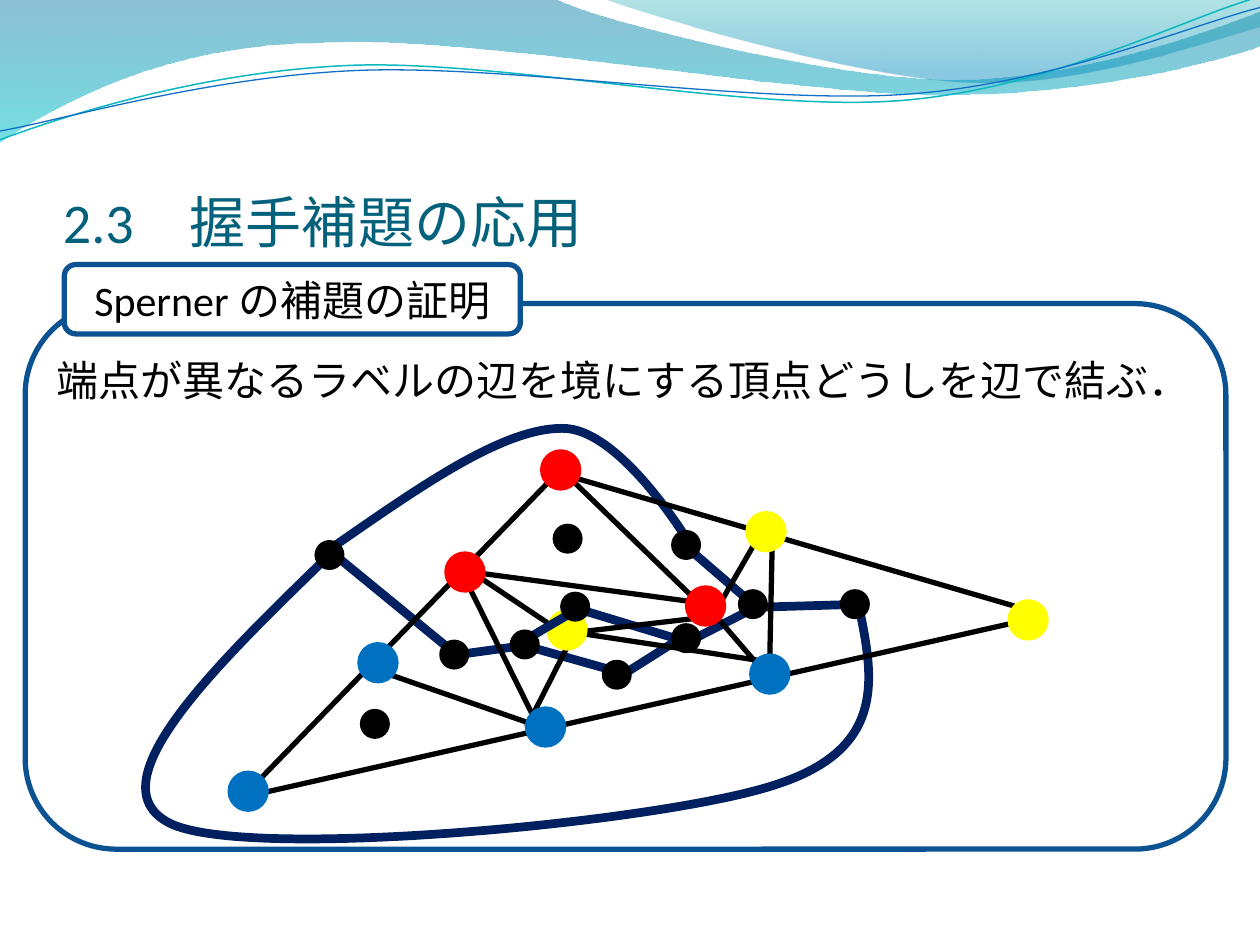
from dataclasses import dataclass

import pptx
import pptx.dml.color
import pptx.enum.shapes
import pptx.enum.text
import pptx.oxml
import pptx.oxml.ns
import pptx.util
from pptx.util import Inches

COLORS = {
    "red": "FF0000", "yellow": "FFFF00", "blue": "0070C0", "black": "000000",
    "white": "FFFFFF", "navy": "002060", "frame": "0B5292", "title": "04617B",
    "wave_teal": "0AB8BF", "wave_blue": "0F6FC6",
    "band_top": "0074A1", "band_bottom": "00C6CF",
    "swoosh_top": "00A1A9", "swoosh_bottom": "008BBF",
}
FONT = "Calibri"
VERTEX_SIZE, FACE_SIZE = 0.3, 0.21
Point = tuple[float, float]


@dataclass
class Stop:
    position: float
    color: str
    alpha: int


@dataclass
class Outline:
    """A start point, then segments of one point (line) or three (cubic curve)."""
    start: Point
    segments: list[tuple[Point, ...]]
    color: str = ""
    width: float = 0
    stops: tuple[Stop, ...] = ()


@dataclass
class Dot:
    left: float
    top: float
    color: str = "black"
    size: float = FACE_SIZE


@dataclass
class Edge:
    x1: float
    y1: float
    x2: float
    y2: float


WAVES = [
    Outline((0, -0.01), [((4.4, -0.01),), ((4.76, 0.17), (6.64, 0.63), (7.58, 0.63)),
                         ((8.53, 0.63), (9.58, 0.26), (10, 0.09)), ((10.01, 0.36),),
                         ((9.83, 0.44), (8.7, 0.76), (7.46, 0.75)),
                         ((6.22, 0.75), (3.82, 0.28), (2.57, 0.34)),
                         ((1.29, 0.35), (0.46, 0.83), (-0.01, 1.13))],
            stops=(Stop(0, "band_top", 45), Stop(1, "band_bottom", 55))),
    Outline((4.79, -0.01), [((5.09, 0.11), (6.82, 0.62), (7.69, 0.65)),
                            ((8.56, 0.69), (9.61, 0.32), (10, 0.21)), ((10, 0),)],
            stops=(Stop(0, "swoosh_top", 30), Stop(0.8, "swoosh_bottom", 45))),
    Outline((0, 1.11), [((0.48, 0.93), (1.58, 0.57), (2.77, 0.52)),
                        ((3.95, 0.47), (5.93, 0.89), (7.13, 0.8)),
                        ((8.33, 0.71), (9.38, 0.15), (9.98, -0.02))], "wave_teal", 0.85),
    Outline((0, 1.04), [((0.47, 0.96), (1.64, 0.61), (2.83, 0.56)),
                        ((4.03, 0.51), (5.97, 0.83), (7.17, 0.75)),
                        ((8.36, 0.67), (9.41, 0.21), (10, 0.06))], "wave_blue", 0.75),
]
OUTER_ARCS = [
    Outline((6.81, 4.78), [((6.93, 5.36), (7.06, 5.94), (6.15, 6.23)),
                           ((5.24, 6.53), (1.93, 6.84), (1.34, 6.53)),
                           ((0.75, 6.22), (1.68, 5.31), (2.62, 4.4))], "navy", 5),
    Outline((2.63, 4.35), [((3.31, 3.88), (3.98, 3.4), (4.46, 3.4)),
                           ((4.93, 3.39), (5.49, 4.34), (5.49, 4.34))], "navy", 5),
]
DUAL_EDGES = [
    Edge(6, 4.82, 6.68, 4.8), Edge(5.46, 4.35, 5.9, 4.73),
    Edge(5.47, 5.09, 5.9, 4.87), Edge(4.61, 4.84, 5.34, 5.06),
    Edge(4.92, 5.37, 5.52, 4.99), Edge(4.15, 5.12, 4.97, 5.35),
    Edge(2.64, 4.39, 3.53, 5.12), Edge(3.6, 5.2, 4.26, 5.11),
]
EDGE_OVER_VERTEX = Edge(4.49, 4.89, 4.15, 5.09)
MESH_EDGES = [
    Edge(1.98, 6.27, 4.35, 3.83), Edge(4.45, 3.76, 8.05, 4.81),
    Edge(2.05, 6.3, 8.15, 4.92), Edge(3.11, 5.36, 4.29, 5.77),
    Edge(4.22, 5.66, 3.66, 4.53), Edge(4.56, 3.83, 5.53, 4.77),
    Edge(3.58, 4.43, 4.43, 5), Edge(6.13, 4.26, 6.11, 5.2),
    Edge(3.74, 4.54, 5.75, 4.81), Edge(4.56, 5.02, 4.18, 5.77),
    Edge(4.56, 5.02, 6.01, 5.24), Edge(4.56, 5.02, 5.5, 4.91),
    Edge(6.13, 5.41, 5.7, 4.91), Edge(5.68, 4.85, 5.98, 4.33),
]
VERTICES = [Dot(x, y, color, VERTEX_SIZE) for x, y, color in [
    (4.3, 3.58, "red"), (8.01, 4.77, "yellow"), (1.82, 6.13, "blue"),
    (2.85, 5.11, "blue"), (3.54, 4.39, "red"), (4.18, 5.62, "blue"),
    (5.96, 5.2, "blue"), (5.93, 4.07, "yellow"), (4.35, 4.85, "yellow"),
    (5.45, 4.66, "red"),
]]
FACES = [Dot(x, y) for x, y in [
    (4.4, 4.17), (5.34, 4.22), (5.87, 4.69), (6.68, 4.69), (5.34, 4.96), (4.79, 5.25),
    (3.5, 5.09), (2.87, 5.64), (2.51, 4.3), (4.46, 4.71), (4.06, 5.01),
]]


def rgb(name: str) -> pptx.dml.color.RGBColor:
    return pptx.dml.color.RGBColor.from_string(COLORS[name])


def style(sp, fill: str, line: str, width: float) -> None:
    """Set fill and line; an empty colour name means none."""
    sp.shadow.inherit = False
    for target, color in ((sp.fill, fill), (sp.line.fill, line)):
        if color:
            target.solid()
            target.fore_color.rgb = rgb(color)
        else:
            target.background()
    if line:
        sp.line.width = pptx.util.Pt(width)


def fill_gradient(sp, stops: tuple[Stop, ...]) -> None:
    """Apply a translucent gradient from top to bottom."""
    sp.fill.gradient()
    sp.fill.gradient_angle = 270
    for target, stop in zip(sp.fill.gradient_stops, stops):
        target.position = stop.position
        target.color.rgb = rgb(stop.color)
    colors = list(sp.element.spPr.iter(pptx.oxml.ns.qn("a:srgbClr")))
    for color, stop in zip(colors, stops):
        color.append(pptx.oxml.parse_xml(
            f'<a:alpha {pptx.oxml.ns.nsdecls("a")} val="{stop.alpha * 1000}"/>'))


def bend_segments(sp, segments: list[tuple[Point, ...]]) -> None:
    """Turn each run of three straight steps that stands for a curve into a Bezier."""
    steps = iter(list(sp.element.spPr.iter(pptx.oxml.ns.qn("a:lnTo"))))
    for segment in segments:
        group = [next(steps) for _ in segment]
        if len(group) == 3:
            curve = pptx.oxml.parse_xml(f'<a:cubicBezTo {pptx.oxml.ns.nsdecls("a")}/>')
            group[0].addprevious(curve)
            for step in group:
                curve.append(step[0])
                step.getparent().remove(step)


def draw_outline(s, outline: Outline) -> None:
    points = [outline.start] + [pt for segment in outline.segments for pt in segment]
    vertices = [(Inches(x), Inches(y)) for x, y in points]
    builder = s.shapes.build_freeform(*vertices[0])
    builder.add_line_segments(vertices[1:], close=bool(outline.stops))
    sp = builder.convert_to_shape()
    bend_segments(sp, outline.segments)
    style(sp, "", outline.color, outline.width)
    if outline.stops:
        fill_gradient(sp, outline.stops)


def draw_edge(s, edge: Edge, color: str, width: float) -> None:
    line = s.shapes.add_connector(
        pptx.enum.shapes.MSO_CONNECTOR.STRAIGHT,
        Inches(edge.x1), Inches(edge.y1), Inches(edge.x2), Inches(edge.y2))
    line.line.color.rgb = rgb(color)
    line.line.width = pptx.util.Pt(width)
    line.element.spPr.append(
        pptx.oxml.parse_xml(f'<a:effectLst {pptx.oxml.ns.nsdecls("a")}/>'))


def draw_shape(s, kind: str, box: tuple[float, ...], fill: str, line: str, width: float):
    sp = s.shapes.add_shape(getattr(pptx.enum.shapes.MSO_SHAPE, kind), *map(Inches, box))
    style(sp, fill, line, width)
    return sp


def draw_dot(s, dot: Dot) -> None:
    draw_shape(s, "OVAL", (dot.left, dot.top, dot.size, dot.size), dot.color, dot.color, 2)


def write(sp, text: str, size: int, color: str, anchor: str, align: str = "LEFT") -> None:
    tf = sp.text_frame
    tf.word_wrap = True
    tf.vertical_anchor = getattr(pptx.enum.text.MSO_ANCHOR, anchor)
    p = tf.paragraphs[0]
    p.alignment = getattr(pptx.enum.text.PP_ALIGN, align)
    r = p.add_run()
    r.text = text
    r.font.name, r.font.size, r.font.color.rgb = FONT, pptx.util.Pt(size), rgb(color)


def main() -> None:
    prs = pptx.Presentation()
    prs.slide_width, prs.slide_height = Inches(10), Inches(7.5)
    s = prs.slides.add_slide(prs.slide_layouts[6])

    for outline in WAVES + OUTER_ARCS:
        draw_outline(s, outline)
    for edge in DUAL_EDGES:
        draw_edge(s, edge, "navy", 5)

    title = s.shapes.add_textbox(*map(Inches, (0.5, 0.77, 9, 1.25)))
    tf = title.text_frame
    tf.margin_left = tf.margin_right = tf.margin_bottom = 0
    write(title, "2.3　握手補題の応用", 32, "title", "BOTTOM")
    body = s.shapes.add_textbox(*map(Inches, (0.35, 2.33, 9.45, 4.8)))
    body.text_frame.margin_top = Inches(0.48)
    write(body, "端点が異なるラベルの辺を境にする頂点どうしを辺で結ぶ．", 24, "black", "TOP")
    draw_shape(s, "ROUNDED_RECTANGLE", (0.2, 2.41, 9.53, 4.33), "", "frame", 3)

    for edge in MESH_EDGES:
        draw_edge(s, edge, "black", 3)
    for vertex in VERTICES:
        draw_dot(s, vertex)
    draw_edge(s, EDGE_OVER_VERTEX, "navy", 5)
    for face in FACES:
        draw_dot(s, face)

    label = draw_shape(s, "ROUNDED_RECTANGLE", (0.51, 2.1, 3.62, 0.55), "white", "frame", 3)
    write(label, "Sperner の補題の証明", 24, "black", "MIDDLE", "CENTER")
    prs.save("out.pptx")


if __name__ == "__main__":
    main()
